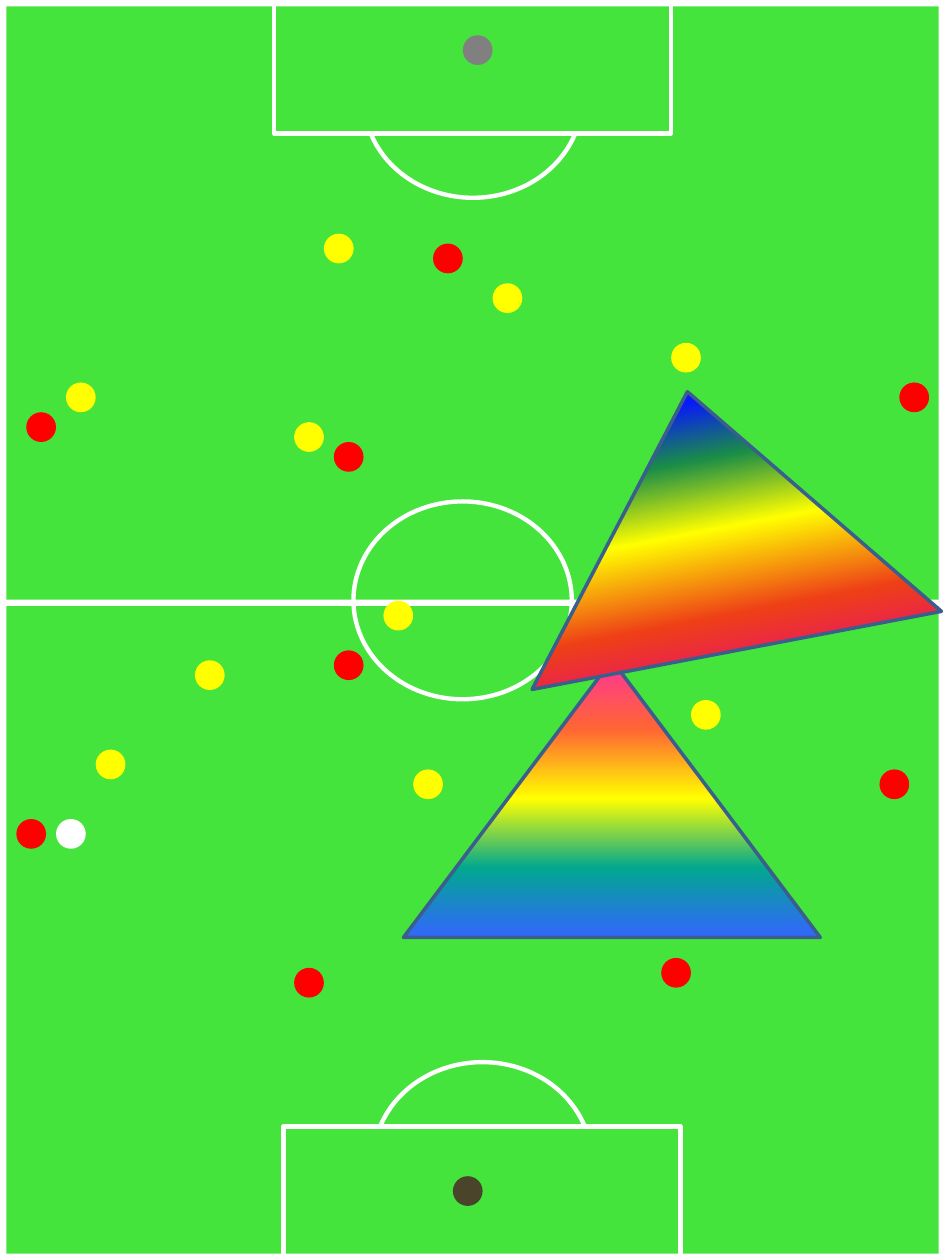
from typing import NamedTuple, Optional

from lxml.etree import SubElement
from pptx import Presentation
from pptx.dml.color import RGBColor
from pptx.enum.shapes import MSO_SHAPE as Preset
from pptx.oxml.ns import qn
from pptx.util import Inches, Mm, Pt

WIDTH, HEIGHT = Inches(7.5), Inches(10)
COLORS = {
    "grass": "44E43C", "chalk": "FFFFFF", "yellow": "FFFF00", "red": "FF0000",
    "far keeper": "808080", "near keeper": "4A452A", "ball": "FFFFFF",
    "zone edge": "3A5F8C",
}

# Players stand on a 2 mm grid, counted from this first column and row
CELL, DOT = Mm(2), Mm(6)
FIRST_COLUMN, FIRST_ROW = Inches(0.13), Inches(0.28)


class Mark(NamedTuple):
    """A pitch marking, in shares of the slide's width and height."""
    preset: Preset
    left: float
    top: float
    width: float
    height: float
    fill: Optional[str] = None
    line: Optional[str] = None


class Zone(NamedTuple):
    """A shaded triangle: shares of the slide, turn and (percent, colour) stops."""
    left: float
    top: float
    width: float
    height: float
    turn: float
    stops: tuple


def stripe(left: float, top: float, width: float, height: float) -> Mark:
    return Mark(Preset.RECTANGLE, left, top, width, height, fill="chalk")


def circle(left: float, top: float) -> Mark:
    return Mark(Preset.OVAL, left, top, 0.231, 0.157, line="chalk")


def penalty_box(left: float, top: float) -> Mark:
    return Mark(Preset.RECTANGLE, left, top, 0.42, 0.106, "grass", "chalk")


EDGE_X, EDGE_Y = 0.0067, 0.005
MARKINGS = [
    stripe(0, 0, EDGE_X, 1),
    stripe(1 - EDGE_X, 0, EDGE_X, 1),
    stripe(0, 0.476, 1, EDGE_Y),
    circle(0.374, 0.398),
    circle(0.385, 0),
    circle(0.395, 0.843),
    penalty_box(0.3, 0.894),
    stripe(0, 1 - EDGE_Y, 1, EDGE_Y),
    penalty_box(0.29, 0),
    stripe(0, 0, 1, EDGE_Y),
]

# (column, row) of everyone on the pitch
POSITIONS = {
    "yellow": [(5, 35), (31, 20), (66, 31), (48, 25), (18, 63),
               (37, 57), (28, 39), (68, 67), (8, 72), (40, 74)],
    "red": [(32, 62), (32, 41), (57, 60), (42, 21), (1, 38),
            (28, 94), (89, 35), (65, 93), (87, 74), (0, 79)],
    "near keeper": [(44, 115)],
    "far keeper": [(45, 0)],
    "ball": [(4, 79)],
}

ZONES = [
    Zone(0.427, 0.524, 0.441, 0.22, 0,
         ((0, "FF3399"), (25, "FF6633"), (50, "FFFF00"), (75, "01A78F"),
          (100, "3366FF"))),
    Zone(0.533, 0.309, 0.441, 0.209, 349.2,
         ((0, "A603AB"), (21, "0819FB"), (35, "1A8D48"), (52, "FFFF00"),
          (73, "EE3F17"), (88, "E81766"), (100, "A603AB"))),
]


def rgb(name: str) -> RGBColor:
    return RGBColor.from_string(COLORS[name])


def add_preset(shapes, preset: Preset, box: tuple, fill: Optional[str] = None,
               line: Optional[str] = None, weight: float = 2.5):
    shape = shapes.add_shape(preset, *(int(length) for length in box))
    shape.shadow.inherit = False
    if fill:
        shape.fill.solid()
        shape.fill.fore_color.rgb = rgb(fill)
    else:
        shape.fill.background()
    if line:
        shape.line.color.rgb = rgb(line)
        shape.line.width = Pt(weight)
    else:
        shape.line.fill.background()
    return shape


def share_box(item) -> tuple:
    return (item.left * WIDTH, item.top * HEIGHT,
            item.width * WIDTH, item.height * HEIGHT)


def add_dot(shapes, column: int, row: int, color: str) -> None:
    box = (FIRST_COLUMN + column * CELL, FIRST_ROW + row * CELL, DOT, DOT)
    add_preset(shapes, Preset.OVAL, box, color)


def add_zone(shapes, zone: Zone) -> None:
    triangle = add_preset(shapes, Preset.ISOSCELES_TRIANGLE, share_box(zone),
                          line="zone edge", weight=2)
    triangle.rotation = zone.turn
    triangle.fill.gradient()
    triangle.fill.gradient_angle = 270
    stop_list = triangle.element.spPr.find(qn("a:gradFill")).find(qn("a:gsLst"))
    for old_stop in list(stop_list):
        stop_list.remove(old_stop)
    for percent, color in zone.stops:
        stop = SubElement(stop_list, qn("a:gs"), pos=str(percent * 1000))
        SubElement(stop, qn("a:srgbClr"), val=color)


def main() -> None:
    deck = Presentation()
    deck.slide_width, deck.slide_height = WIDTH, HEIGHT
    slide = deck.slides.add_slide(deck.slide_layouts[6])

    # Grass and chalk lines
    slide.background.fill.solid()
    slide.background.fill.fore_color.rgb = rgb("grass")
    pitch = slide.shapes.add_group_shape()
    for mark in MARKINGS:
        add_preset(pitch.shapes, mark.preset, share_box(mark), mark.fill, mark.line)

    # Teams, keepers and ball
    for color, spots in POSITIONS.items():
        for column, row in spots:
            add_dot(slide.shapes, column, row, color)

    # Shaded zones
    for zone in ZONES:
        add_zone(slide.shapes, zone)

    deck.save("out.pptx")


if __name__ == "__main__":
    main()
